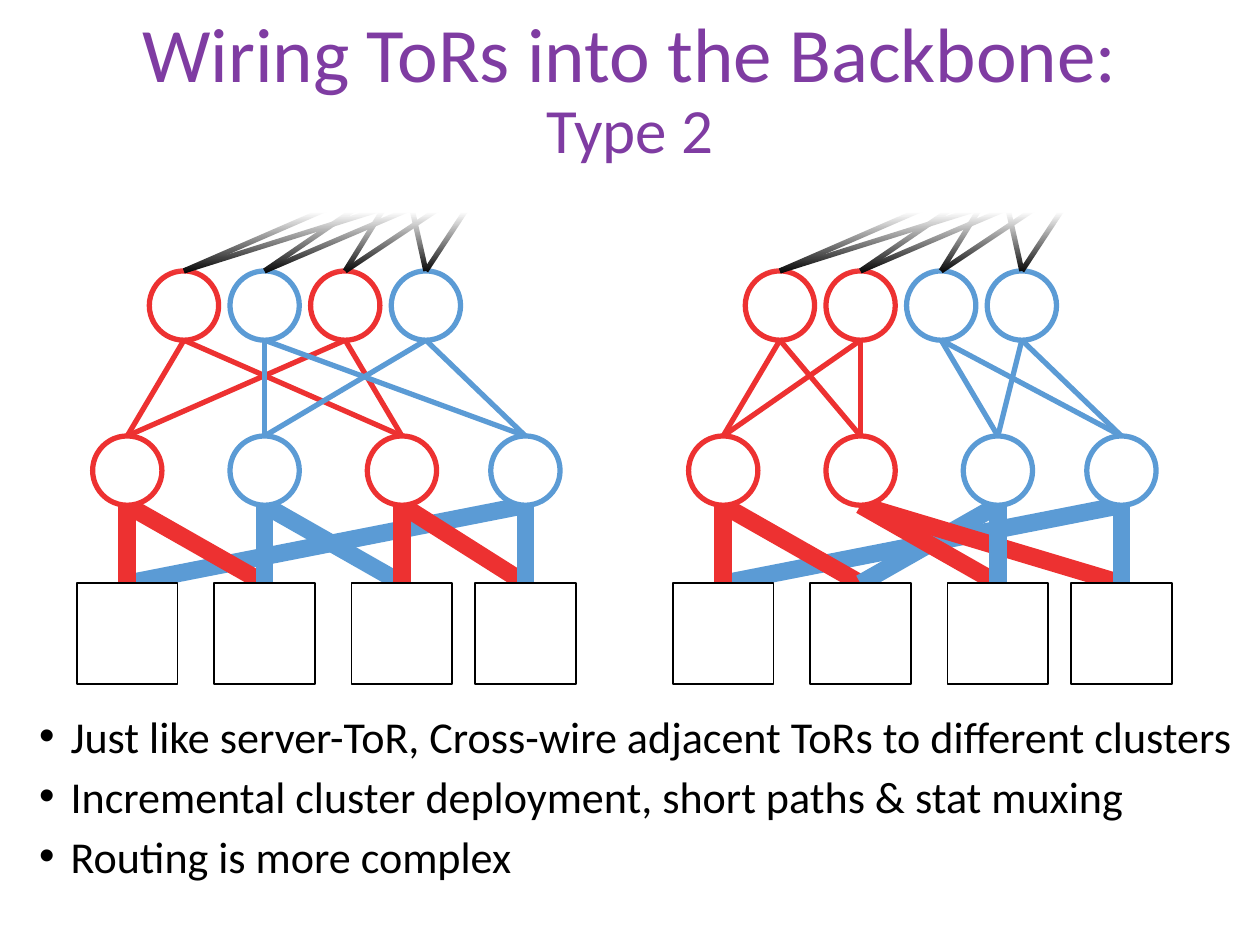
from pptx import Presentation
from pptx.dml.color import RGBColor
from pptx.enum import shapes as kinds, text as txt
from pptx.oxml.ns import qn
from pptx.util import Inches, Pt
from lxml import etree

COLORS = {"red": "ED3131", "blue": "5B9BD5", "black": "000000",
          "white": "FFFFFF", "title": "7F3CA2"}

# Horizontal centres within a cluster box, and tops of its rows
TOR_X = [0.4, 1.49, 2.58, 3.56]
CLUSTER_X = [0.85 + 0.64 * i for i in range(4)]
SPINE_X = [2.6, 3.27]
CLUSTER_Y, TOR_Y, RACK_Y = 0.76, 2.07, 3.24
CIRCLE, RACK = 0.55, 0.8

# Wires are (lower node, upper node), in drawing order
LEFT = {
    "cluster_colors": ["red", "blue", "red", "blue"],
    "tor_colors": ["red", "blue", "red", "blue"],
    "tor_wires": [(0, 2), (2, 0), (0, 0), (1, 1), (2, 2), (3, 3), (1, 3), (3, 1)],
    "rack_wires": [(0, 3), (2, 1), (1, 0), (0, 0), (3, 2), (2, 2), (1, 1), (3, 3)],
}
RIGHT = {
    "cluster_colors": ["red", "red", "blue", "blue"],
    "tor_colors": ["red", "red", "blue", "blue"],
    "tor_wires": [(0, 1), (1, 0), (0, 0), (1, 1), (2, 2), (3, 3), (2, 3), (3, 2)],
    "rack_wires": [(0, 3), (1, 0), (0, 0), (1, 2), (2, 1), (3, 1), (2, 2), (3, 3)],
}


def rgb(name):
    return RGBColor.from_string(COLORS[name])


def add_text(paragraph, words, size, color="black", font="Calibri"):
    run = paragraph.add_run()
    run.text = words
    run.font.size = Pt(size)
    run.font.name = font
    run.font.color.rgb = rgb(color)


def place(holder, left, top, width, height):
    holder.left, holder.top = Inches(left), Inches(top)
    holder.width, holder.height = Inches(width), Inches(height)
    frame = holder.text_frame
    frame.word_wrap = True
    frame.auto_size = txt.MSO_AUTO_SIZE.NONE
    frame.vertical_anchor = txt.MSO_ANCHOR.MIDDLE
    return frame


def add_wire(slide, start, end, color, weight):
    wire = slide.shapes.add_connector(
        kinds.MSO_CONNECTOR.STRAIGHT, *[Inches(v) for v in (*start, *end)])
    wire.line.color.rgb = rgb(color)
    wire.line.width = Pt(weight)
    etree.SubElement(wire.element.spPr, qn("a:effectLst"))
    return wire


def add_row(slide, kind, centres, left, top, size, colors, weight):
    """Draw one row of equal nodes and return them."""
    row = []
    for x, color in zip(centres, colors):
        node = slide.shapes.add_shape(kind, Inches(left + x - size / 2), Inches(top),
                                      Inches(size), Inches(size))
        node.shadow.inherit = False
        node.fill.solid()
        node.fill.fore_color.rgb = rgb("white")
        node.line.color.rgb = rgb(color)
        node.line.width = Pt(weight)
        row.append(node)
    return row


def add_cluster(slide, left, top, plan):
    """Draw racks, ToRs and cluster switches; wires lie behind the nodes."""
    def wire_up(pairs, lower_x, lower_y, upper_x, upper_y, colors, weight):
        return [(low, add_wire(slide, (left + lower_x[low], top + lower_y),
                               (left + upper_x[up], top + upper_y), colors[up], weight))
                for low, up in pairs]

    rack_wires = wire_up(plan["rack_wires"], TOR_X, RACK_Y, TOR_X, TOR_Y + CIRCLE,
                         plan["tor_colors"], 10)
    tor_wires = wire_up(plan["tor_wires"], TOR_X, TOR_Y, CLUSTER_X, CLUSTER_Y + CIRCLE,
                        plan["cluster_colors"], 3)

    oval, square = kinds.MSO_SHAPE.OVAL, kinds.MSO_SHAPE.RECTANGLE
    racks = add_row(slide, square, TOR_X, left, top + RACK_Y, RACK, ["black"] * 4, 1)
    tors = add_row(slide, oval, TOR_X, left, top + TOR_Y, CIRCLE, plan["tor_colors"], 3)
    switches = add_row(slide, oval, CLUSTER_X, left, top + CLUSTER_Y, CIRCLE,
                       plan["cluster_colors"], 3)

    spine_wires = wire_up([(low, up) for low in range(4) for up in range(2)],
                          CLUSTER_X, CLUSTER_Y, SPINE_X, 0, ["black"] * 2, 3)
    for wires, nodes in ((rack_wires, racks), (tor_wires, tors), (spine_wires, switches)):
        for low, wire in wires:
            wire.begin_connect(nodes[low], 0)


def add_fade(slide, left, top, width, height):
    """White cover that turns transparent at its bottom edge."""
    fade = slide.shapes.add_shape(kinds.MSO_SHAPE.RECTANGLE, Inches(left), Inches(top),
                                  Inches(width), Inches(height))
    fade.shadow.inherit = False
    fade.line.fill.background()
    fade.fill.gradient()
    fade.fill.gradient_angle = 90
    for stop, position in zip(fade.fill.gradient_stops, (0, 0.28)):
        stop.position = position
        stop.color.rgb = rgb("white")
    clear = next(fade.element.spPr.iter(qn("a:srgbClr")))
    etree.SubElement(clear, qn("a:alpha"), val="0")


def add_title(slide, left, top, width, height):
    title = slide.shapes.title
    paragraph = place(title, left, top, width, height).paragraphs[0]
    paragraph.alignment = txt.PP_ALIGN.CENTER
    paragraph.line_spacing = 0.9
    add_text(paragraph, "Wiring ToRs into the Backbone: ", 44, "title")
    add_text(paragraph, "Type 2", 36, "title")
    slide.shapes.element.append(title.element)  # in front of the fade


def add_points(slide, left, top, width, height, points):
    frame = place(slide.placeholders[1], left, top, width, height)
    frame.margin_top = Inches(0.27)
    for i, point in enumerate(points):
        paragraph = frame.add_paragraph() if i else frame.paragraphs[0]
        paragraph.line_spacing = 0.8
        paragraph.space_before = Pt(10 if i else 0)
        properties = paragraph._p.get_or_add_pPr()
        properties.set("marL", str(Inches(0.25)))
        properties.set("indent", str(-Inches(0.25)))
        etree.SubElement(properties, qn("a:buFont"), typeface="Arial")
        etree.SubElement(properties, qn("a:buChar"), char="•")
        add_text(paragraph, point, 25.2)


def main():
    deck = Presentation()
    deck.slide_width, deck.slide_height = Inches(10), Inches(7.5)
    slide = deck.slides.add_slide(deck.slide_layouts[1])
    add_points(slide, 0.21, 5.29, 9.79, 1.91, [
        "Just like server-ToR, Cross-wire adjacent ToRs to different clusters",
        "Incremental cluster deployment, short paths & stat muxing",
        "Routing is more complex",
    ])
    for left, plan in ((5.34, RIGHT), (0.61, LEFT)):
        add_cluster(slide, left, 1.39, plan)
    add_fade(slide, 0.58, 0.43, 8.83, 1.73)
    add_title(slide, 0.69, 0, 8.62, 1.45)
    deck.save("out.pptx")


if __name__ == "__main__":
    main()
